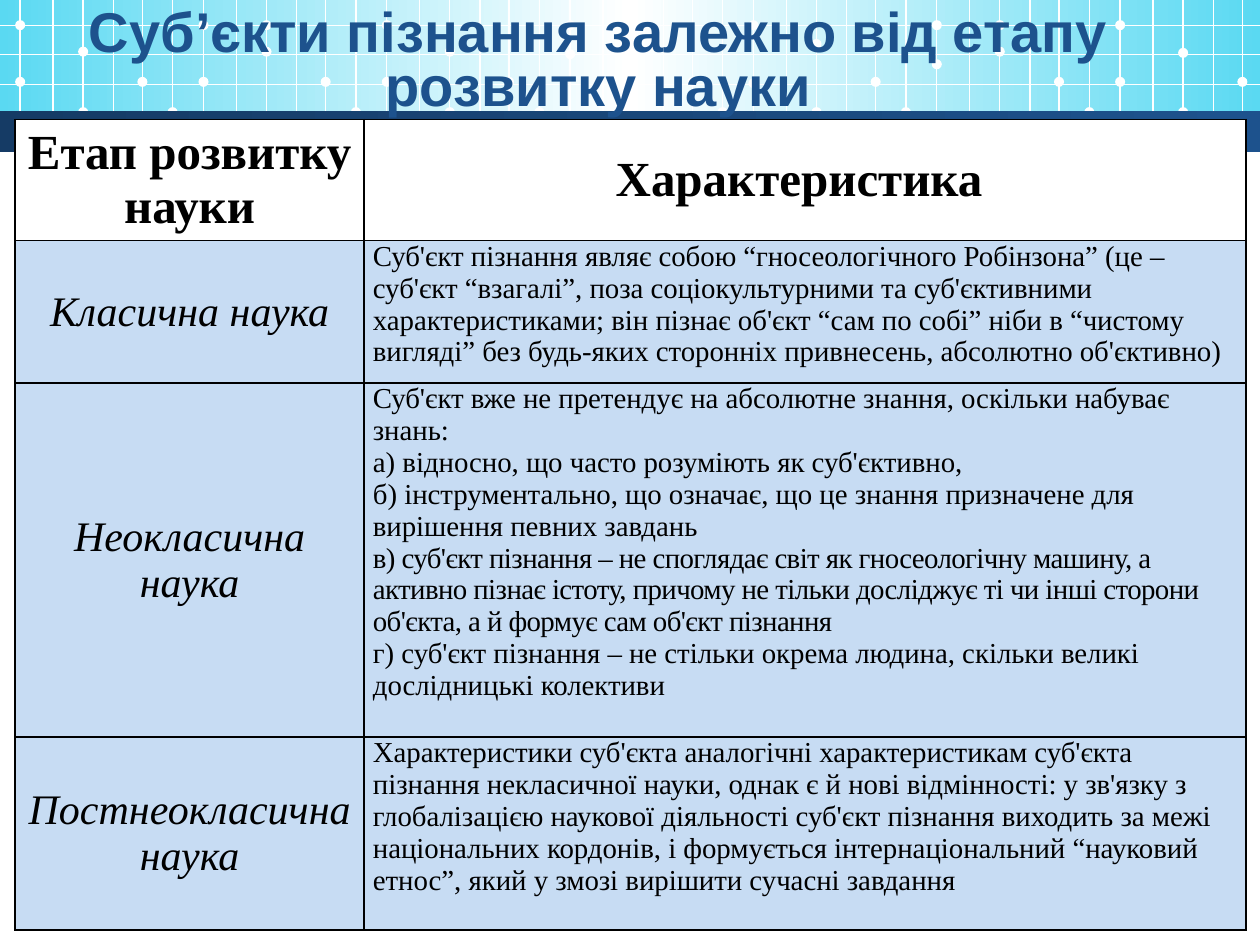
from copy import deepcopy
from dataclasses import dataclass

from lxml import etree
from pptx import Presentation
from pptx.dml.color import RGBColor
from pptx.enum import shapes, text
from pptx.oxml import ns
from pptx.util import Inches, Pt


@dataclass(frozen=True)
class Theme:
    """Colours, fonts and type sizes of the slide."""
    aqua: str = "5AD9F2"
    white: str = "FFFFFF"
    navy: str = "153B65"
    blue: str = "1D528D"
    pale: str = "C7DCF3"
    black: str = "000000"
    title_font: str = "Arial"
    table_font: str = "Times New Roman"
    title_size: float = 32
    head_size: float = 28
    stage_size: float = 24
    body_size: float = 16.5


THEME = Theme()
TITLE = "Суб’єкти пізнання залежно від етапу розвитку науки"
HEADINGS = ("Етап розвитку науки", "Характеристика ")
TIGHT_START = "в)"
STAGES = (
    ("Класична наука", (
        "Суб'єкт пізнання являє собою “гносеологічного Робінзона” (це – суб'єкт “взагалі”, "
        "поза соціокультурними та суб'єктивними характеристиками; він пізнає об'єкт “сам по собі” "
        "ніби в “чистому вигляді” без будь-яких сторонніх привнесень, абсолютно об'єктивно)",)),
    ("Неокласична наука", (
        "Суб'єкт вже не претендує на абсолютне знання, оскільки набуває знань:",
        "а) відносно, що часто розуміють як суб'єктивно,",
        "б) інструментально, що означає, що це знання призначене для вирішення певних завдань",
        "в) суб'єкт пізнання – не споглядає світ як гносеологічну машину, а активно пізнає істоту, "
        "причому не тільки досліджує ті чи інші сторони об'єкта, а й формує сам об'єкт пізнання",
        "г) суб'єкт пізнання – не стільки окрема людина, скільки великі дослідницькі колективи")),
    ("Постнеокласична наука", (
        "Характеристики суб'єкта аналогічні характеристикам суб'єкта пізнання некласичної науки, "
        "однак є й нові відмінності: у зв'язку з глобалізацією наукової діяльності суб'єкт пізнання "
        "виходить за межі національних кордонів, і формується інтернаціональний “науковий етнос”, "
        "який у змозі вирішити сучасні завдання",)),
)


def rgb(color):
    """Return a colour object for a hex string."""
    return RGBColor.from_string(color)


def add_plain(slide, kind, left, top, width, height):
    """Add a shape without outline or shadow."""
    shape = slide.shapes.add_shape(kind, Inches(left), Inches(top), Inches(width), Inches(height))
    shape.shadow.inherit = False
    shape.line.fill.background()
    return shape


def add_gradient_band(slide, left, top, width, height, colors):
    """Add a rectangle with evenly spaced colours from left to right."""
    band = add_plain(slide, shapes.MSO_SHAPE.RECTANGLE, left, top, width, height)
    band.fill.gradient()
    band.fill.gradient_angle = 0
    stops = band.element.spPr.find(".//" + ns.qn("a:gsLst"))
    while len(stops) < len(colors):
        stops.append(deepcopy(stops[-1]))
    for index, (stop, color) in enumerate(zip(band.fill.gradient_stops, colors)):
        stop.color.rgb = rgb(color)
        stop.position = index / (len(colors) - 1)


def add_grid_line(slide, x1, y1, x2, y2):
    """Add a thin white line."""
    line = slide.shapes.add_connector(
        shapes.MSO_CONNECTOR.STRAIGHT, Inches(x1), Inches(y1), Inches(x2), Inches(y2))
    line.line.color.rgb = rgb(THEME.white)
    line.line.width = Pt(0.75)
    etree.SubElement(line.element.spPr, ns.qn("a:effectLst"))


def add_header(slide, left, top, width, height):
    """Draw the header gradient, its grid with dots and the dark band below."""
    add_gradient_band(slide, left, top, width, 1.02, (THEME.aqua, THEME.white, THEME.aqua))
    bay_offsets = (0, 0.26, 0.5, 0.74, 0.97, 1.21)
    first_dots = (0.65, 0.65, 0.65, 0.43, 0.66, 0.51, 0.65)
    third_dots = (0.41, 0.41, 0.41, 0.42, 0.35, 0.41, 0.42)
    dot = 0.08
    for bay, (first, third) in enumerate(zip(first_dots, third_dots)):
        bay_left = left + 0.16 + 1.455 * bay
        for offset in bay_offsets:
            if bay_left + offset < left + width:
                add_grid_line(slide, bay_left + offset, top, bay_left + offset, top + 1.1)
        fourth = 0.2 if bay % 2 else 0.89
        dots = ((0, first), (0, 0.2), (0.5, third), (0.5, fourth), (0.97, 0.65), (1.21, 0.89))
        for x, y in dots:
            if bay_left + x < left + width:
                node = add_plain(slide, shapes.MSO_SHAPE.OVAL,
                                 bay_left + x - dot / 2, top + y - dot / 2, dot, dot)
                node.fill.solid()
                node.fill.fore_color.rgb = rgb(THEME.white)
    for y in (0.2, 0.43, 0.67, 0.89):
        add_grid_line(slide, left, top + y, left + width, top + y)
    band_height = 0.33
    add_gradient_band(slide, left, top + height - band_height, width, band_height,
                      (THEME.navy, THEME.blue))


def place_title(slide, left, top, width, height):
    """Place and format the title above the header."""
    title = slide.shapes.title
    slide.shapes.element.append(title.element)
    title.left, title.top = Inches(left), Inches(top)
    title.width, title.height = Inches(width), Inches(height)
    title.text_frame.text = TITLE
    title.text_frame.word_wrap = True
    title.text_frame.vertical_anchor = text.MSO_ANCHOR.MIDDLE
    heading = title.text_frame.paragraphs[0]
    heading.alignment = text.PP_ALIGN.CENTER
    heading.line_spacing = 0.8
    heading.font.name = THEME.title_font
    heading.font.size = Pt(THEME.title_size)
    heading.font.bold = True
    heading.font.color.rgb = rgb(THEME.blue)


def add_borders(cell):
    """Give a cell a thin black border on each side."""
    properties = cell._tc.get_or_add_tcPr()
    for index, side in enumerate(("lnL", "lnR", "lnT", "lnB")):
        border = etree.Element(ns.qn("a:" + side), w=str(Pt(1)))
        fill = etree.SubElement(border, ns.qn("a:solidFill"))
        etree.SubElement(fill, ns.qn("a:srgbClr"), val=THEME.black)
        properties.insert(index, border)


def fill_cell(cell, lines, size, fill, centred=True, bold=False, italic=False):
    """Write paragraphs into a cell and format it."""
    cell.margin_left = cell.margin_right = Inches(0.07)
    cell.margin_top = cell.margin_bottom = 0
    cell.vertical_anchor = text.MSO_ANCHOR.MIDDLE if centred else text.MSO_ANCHOR.TOP
    cell.fill.solid()
    cell.fill.fore_color.rgb = rgb(fill)
    add_borders(cell)
    cell.text = "\n".join(lines)
    for paragraph in cell.text_frame.paragraphs:
        paragraph.alignment = text.PP_ALIGN.CENTER if centred else text.PP_ALIGN.LEFT
        paragraph.font.name = THEME.table_font
        paragraph.font.size = Pt(size)
        paragraph.font.bold = bold
        paragraph.font.italic = italic
        paragraph.font.color.rgb = rgb(THEME.black)
        if paragraph.text.startswith(TIGHT_START):
            paragraph.runs[0]._r.get_or_add_rPr().set("spc", "-30")


def add_stage_table(slide, left, top, width, height):
    """Add the table of stages and their characteristics."""
    table = slide.shapes.add_table(
        len(STAGES) + 1, 2, Inches(left), Inches(top), Inches(width), Inches(height)).table
    stage_width = 2.77
    for column, column_width in zip(table.columns, (stage_width, width - stage_width)):
        column.width = Inches(column_width)
    for row, row_height in zip(table.rows, (0.96, 1.13, 2.81, 1.53)):
        row.height = Inches(row_height)
    for column, heading in enumerate(HEADINGS):
        fill_cell(table.cell(0, column), [heading], THEME.head_size, THEME.white, bold=True)
    for row, (stage, traits) in enumerate(STAGES, 1):
        fill_cell(table.cell(row, 0), [stage], THEME.stage_size, THEME.pale, italic=True)
        fill_cell(table.cell(row, 1), traits, THEME.body_size, THEME.pale, centred=False)


def main():
    """Build and save the slide."""
    deck = Presentation()
    deck.slide_width, deck.slide_height = Inches(10), Inches(7.5)
    slide = deck.slides.add_slide(deck.slide_layouts[5])
    add_header(slide, 0, 0, 10, 1.21)
    place_title(slide, 0, 0.02, 9.5, 0.96)
    add_stage_table(slide, 0.12, 0.95, 9.77, 6.43)
    deck.save("out.pptx")


if __name__ == "__main__":
    main()
